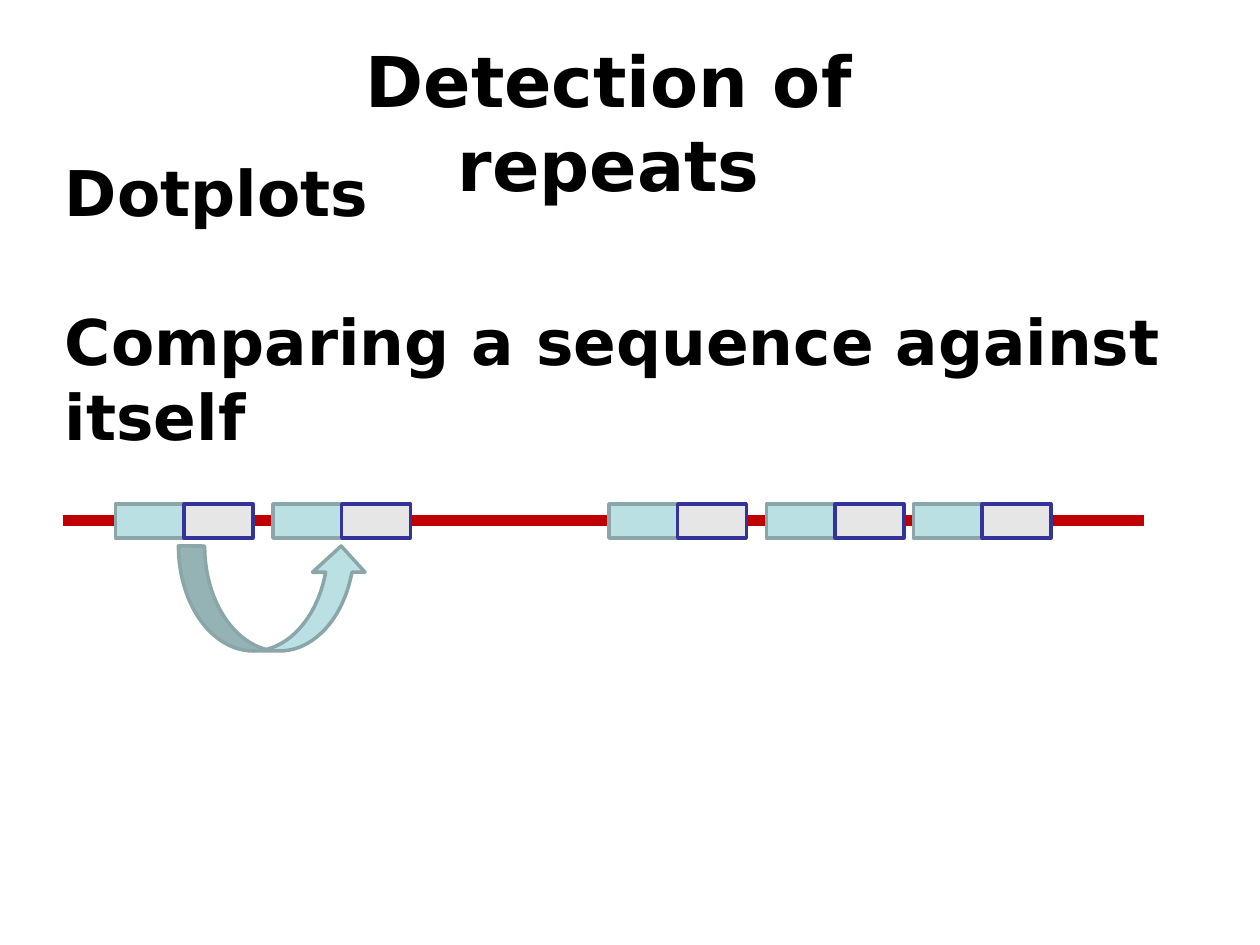
from pptx import Presentation
from pptx.dml.color import RGBColor
from pptx.enum.shapes import MSO_CONNECTOR, MSO_SHAPE
from pptx.enum.text import MSO_ANCHOR, PP_ALIGN
from pptx.oxml.ns import qn
from pptx.util import Pt
from lxml import etree

RECTANGLE = MSO_SHAPE.RECTANGLE
CURVED_ARROW = MSO_SHAPE.CURVED_DOWN_ARROW
STRAIGHT = MSO_CONNECTOR.STRAIGHT
TOP = MSO_ANCHOR.TOP
LEFT, CENTER = PP_ALIGN.LEFT, PP_ALIGN.CENTER

# Content
COLORS = {
    "text": "000000", "sequence": "C00000",
    "teal": "BBE0E3", "teal line": "8AA6A8",
    "gray": "E6E6E6", "blue line": "333399",
}
TEXTS = [  # paragraphs, box, size, alignment, gap between paragraphs
    (["Detection of repeats"], (109.5, 18, 476.5, 55.5), 40, CENTER, 0),
    (["Dotplots", "Comparing a sequence against itself"],
     (30, 84, 654, 196.5), 36, LEFT, 42),
]
SEQUENCE = {"left": 36, "right": 654, "y": 297.5, "weight": 6}
REPEAT_STARTS = [66, 156, 348, 438, 522]
HALVES = [("teal", "teal line"), ("gray", "blue line")]
HALF_WIDTH, REPEAT_TOP, REPEAT_HEIGHT = 39.25, 288, 19.5
ARROW_BOX = (102, 312, 108, 60)


def color(name):
    return RGBColor.from_string(COLORS[name])


def add_text(slide, paragraphs, box, size, alignment, gap):
    frame = slide.shapes.add_textbox(*map(Pt, box)).text_frame
    frame.word_wrap = True
    frame.vertical_anchor = TOP
    font_format = {"name": "DejaVu Sans", "size": Pt(size), "bold": True}
    for index, text in enumerate(paragraphs):
        paragraph = frame.add_paragraph() if index else frame.paragraphs[0]
        paragraph.alignment = alignment
        paragraph.space_before = Pt(gap if index else 0)
        run = paragraph.add_run()
        run.text = text
        for name, value in font_format.items():
            setattr(run.font, name, value)
        run.font.color.rgb = color("text")


def add_filled_shape(shapes, kind, box, fill, line):
    shape = shapes.add_shape(kind, *map(Pt, box))
    shape.shadow.inherit = False
    shape.fill.solid()
    shape.fill.fore_color.rgb = color(fill)
    shape.line.color.rgb = color(line)
    shape.line.width = Pt(2)
    return shape


presentation = Presentation()
presentation.slide_width, presentation.slide_height = Pt(720), Pt(540)
slide = presentation.slides.add_slide(presentation.slide_layouts[6])

# Title and body
for text in TEXTS:
    add_text(slide, *text)

# Sequence line
y = Pt(SEQUENCE["y"])
sequence = slide.shapes.add_connector(
    STRAIGHT, Pt(SEQUENCE["left"]), y, Pt(SEQUENCE["right"]), y)
sequence.line.color.rgb = color("sequence")
sequence.line.width = Pt(SEQUENCE["weight"])
etree.SubElement(sequence._element.spPr, qn("a:effectLst"))

# Repeats, each a group of two halves
for start in REPEAT_STARTS:
    group = slide.shapes.add_group_shape()
    for index, (fill, line) in enumerate(HALVES):
        box = (start + index * HALF_WIDTH, REPEAT_TOP, HALF_WIDTH, REPEAT_HEIGHT)
        add_filled_shape(group.shapes, RECTANGLE, box, fill, line)

# Arrow from the first repeat to the second
arrow = add_filled_shape(slide.shapes, CURVED_ARROW, ARROW_BOX, "teal", "teal line")
arrow._element.spPr.find(qn("a:xfrm")).set("flipV", "1")

presentation.save("out.pptx")
